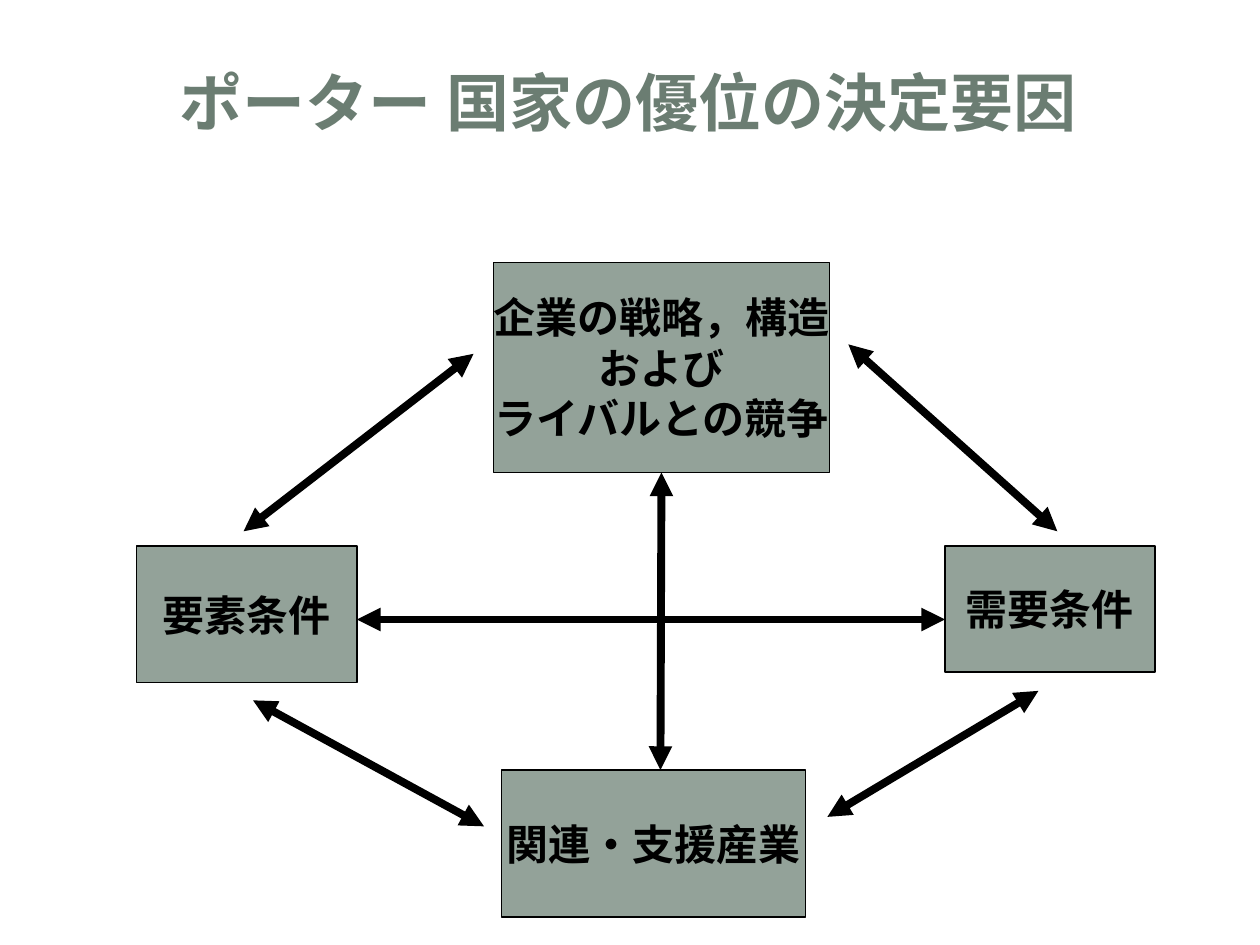
from lxml import etree
from pptx import Presentation
from pptx.dml.color import RGBColor
from pptx.enum.shapes import MSO_CONNECTOR, MSO_SHAPE
from pptx.enum.text import MSO_ANCHOR, PP_ALIGN
from pptx.oxml.ns import qn
from pptx.util import Inches, Pt

RECT = MSO_SHAPE.RECTANGLE
LINE = MSO_CONNECTOR.STRAIGHT
MID, TOP = MSO_ANCHOR.MIDDLE, MSO_ANCHOR.TOP
MAIN = PP_ALIGN.CENTER
HUES = {k: RGBColor.from_string(v) for k, v in
        {"title": "6B7D72", "box": "93A299", "ink": "000000"}.items()}

deck = Presentation()
deck.slide_width, deck.slide_height = Inches(10), Inches(7.5)
COL, ROW = deck.slide_width / 120, deck.slide_height / 90
slide = deck.slides.add_slide(deck.slide_layouts[5])


def grid(x, y):
    return round(x * COL), round(y * ROW)


def write(frame, lines, font, size, hue):
    for i, text in enumerate(lines):
        para = frame.paragraphs[0] if i == 0 else frame.add_paragraph()
        para.alignment = MAIN
        run = para.add_run()
        run.text = text
        run.font.name, run.font.size = font, Pt(size)
        run.font.bold = True
        run.font.color.rgb = HUES[hue]


title = slide.shapes.title
title.left, title.top = grid(5.6, 5.4)
title.width, title.height = grid(108.4, 13.7)
title.text_frame.vertical_anchor = TOP
write(title.text_frame, ["ポーター 国家の優位の決定要因"], "Arial", 36, "title")

boxes = [
    (47, 25, 32, 20, ["企業の戦略，構造", "および", "ライバルとの競争"]),
    (13, 52, 21, 13, ["要素条件"]),
    (90, 52, 20, 12, ["需要条件"]),
    (47.75, 73.33, 29, 14, ["関連・支援産業"]),
]
for x, y, w, h, lines in boxes:
    box = slide.shapes.add_shape(RECT, *grid(x, y), *grid(w, h))
    box.shadow.inherit = False
    box.fill.solid()
    box.fill.fore_color.rgb = HUES["box"]
    box.line.color.rgb = HUES["ink"]
    box.line.width = Pt(0.75)
    box.text_frame.word_wrap = False
    box.text_frame.vertical_anchor = MID
    write(box.text_frame, lines, "Times New Roman", 24, "ink")

links = [
    (45.1, 33.7, 23.2, 50.6),
    (24.1, 66.7, 46.1, 78.7),
    (80.8, 32.8, 100.7, 50.6),
    (98.9, 65.8, 78.8, 77.8),
    (63, 45, 62.9, 73.33),
    (34, 59, 90, 59),
]
for x, y, u, v in links:
    link = slide.shapes.add_connector(LINE, *grid(x, y), *grid(u, v))
    link.line.color.rgb = HUES["ink"]
    link.line.width = Pt(4.5)
    for tip in ("a:headEnd", "a:tailEnd"):
        etree.SubElement(link.line._ln, qn(tip), type="triangle")
    etree.SubElement(link._element.spPr, qn("a:effectLst"))

deck.save("out.pptx")
